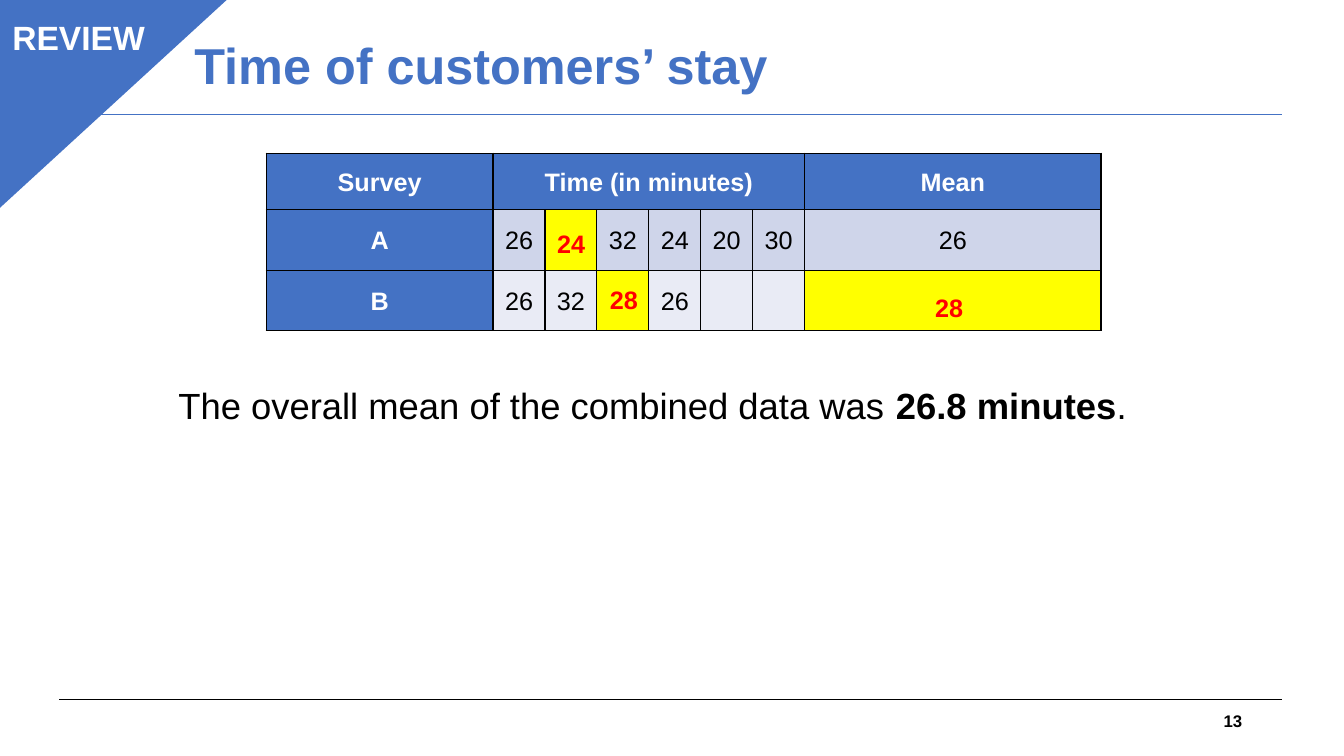
from dataclasses import dataclass

from lxml import etree
from pptx import Presentation
from pptx.dml.color import RGBColor
from pptx.enum.shapes import MSO_CONNECTOR, MSO_SHAPE
from pptx.enum.text import MSO_ANCHOR, PP_ALIGN
from pptx.oxml.ns import qn
from pptx.util import Inches, Pt

LEFT, CENTER, RIGHT = PP_ALIGN.LEFT, PP_ALIGN.CENTER, PP_ALIGN.RIGHT
TOP, MIDDLE = MSO_ANCHOR.TOP, MSO_ANCHOR.MIDDLE
BLUE, BLACK, WHITE, RED, YELLOW = "4472C4", "000000", "FFFFFF", "FF0000", "FFFF00"
BAND_A, BAND_B = "CFD5EA", "E9EBF5"
FONT_NAME = "Arial"
TABLE_SPACING = 1.07


@dataclass(frozen=True)
class Run:
    text: str
    size: float
    color: str = BLACK
    bold: bool = True


@dataclass(frozen=True)
class Label:
    box: tuple[float, float, float, float]
    runs: tuple[Run, ...]
    align: int = LEFT
    anchor: int = TOP
    spacing: float = 1.0


@dataclass(frozen=True)
class Rule:
    top: float
    color: str


@dataclass(frozen=True)
class SurveyRow:
    name: str
    times: tuple[str, ...]
    mean: str
    band: str
    highlighted: tuple[int, ...]


RULES = (Rule(6.94, BLACK), Rule(1.14, BLUE))
RULE_LEFT, RULE_RIGHT = 0.59, 12.72

HEADINGS = {0: "Survey", 1: "Time (in minutes)", 7: "Mean"}
SURVEYS = (
    SurveyRow("A", ("26", "", "32", "24", "20", "30"), "26", BAND_A, (2,)),
    SurveyRow("B", ("26", "32", "", "26", "", ""), "", BAND_B, (3, 7)),
)
TABLE_LEFT, TABLE_TOP = 2.64, 1.52
COLUMN_WIDTHS = (2.25, *[0.515] * 6, 2.94)
ROW_HEIGHTS = (0.56, 0.6, 0.6)


def answer(left: float, top: float, text: str, align: int = CENTER) -> Label:
    """Describe a red answer that lies over a yellow table cell."""
    return Label((left, top, 0.57, 0.4), (Run(text, 18, RED),), align, spacing=TABLE_SPACING)


TITLE = Label((1.83, 0.12, 10, 1.11), (Run("Time of customers’ stay", 36, BLUE),),
              anchor=MIDDLE, spacing=0.9)
PAGE_NUMBER = Label((9.42, 6.95, 3, 0.4), (Run("13", 12),), RIGHT, MIDDLE)
REVIEW = Label((0.01, 0.12, 1.54, 0.5), (Run("REVIEW", 24, WHITE),), CENTER)
CONCLUSION = Label((1.67, 3.75, 10, 0.54), (
    Run("The overall mean of the combined data was ", 26, bold=False),
    Run("26.8 minutes", 26),
    Run(".", 26, bold=False),
))
ANSWERS = (
    answer(5.95, 2.75, "28", LEFT),
    answer(9.13, 2.83, "28"),
    answer(5.38, 2.2, "24"),
)


def rgb(color: str) -> RGBColor:
    return RGBColor.from_string(color)


def set_all(target, values: dict) -> None:
    for name, value in values.items():
        setattr(target, name, value)


def paint(fill, color: str) -> None:
    fill.solid()
    fill.fore_color.rgb = rgb(color)


def write(paragraph, runs: tuple[Run, ...], align: int, spacing: float) -> None:
    set_all(paragraph, {"alignment": align, "line_spacing": spacing})
    for run in runs:
        text_run = paragraph.add_run()
        text_run.text = run.text
        set_all(text_run.font, {"name": FONT_NAME, "size": Pt(run.size), "bold": run.bold})
        text_run.font.color.rgb = rgb(run.color)


def add_label(slide, label: Label) -> None:
    shape = slide.shapes.add_textbox(*map(Inches, label.box))
    set_all(shape.text_frame, {"word_wrap": True, "vertical_anchor": label.anchor})
    write(shape.text_frame.paragraphs[0], label.runs, label.align, label.spacing)


def add_rule(slide, rule: Rule) -> None:
    line = slide.shapes.add_connector(
        MSO_CONNECTOR.STRAIGHT, Inches(RULE_LEFT), Inches(rule.top),
        Inches(RULE_RIGHT), Inches(rule.top))
    line.line.width = Pt(0.75)
    line.line.color.rgb = rgb(rule.color)
    etree.SubElement(line.element.spPr, qn("a:effectLst"))


def add_corner(slide) -> None:
    corner = slide.shapes.add_shape(
        MSO_SHAPE.ISOSCELES_TRIANGLE, *map(Inches, (-0.03, -0.02, 2.29, 2.1)))
    corner.adjustments[0] = 0
    corner.element.spPr.get_or_add_xfrm().set("flipV", "1")
    corner.shadow.inherit = False
    paint(corner.fill, BLUE)
    corner.line.color.rgb = rgb(BLUE)
    corner.line.width = Pt(1)


def add_borders(cell) -> None:
    properties = cell._tc.get_or_add_tcPr()
    for side in ("lnL", "lnR", "lnT", "lnB"):
        border = etree.SubElement(properties, qn(f"a:{side}"), w=str(Pt(1)))
        fill = etree.SubElement(border, qn("a:solidFill"))
        etree.SubElement(fill, qn("a:srgbClr"), val=BLACK)


def format_cell(cell, text: str, fill: str, color: str, margin: float) -> None:
    add_borders(cell)
    paint(cell.fill, fill)
    sides = ("left", "right", "top", "bottom")
    set_all(cell, {f"margin_{side}": Inches(margin) for side in sides})
    cell.vertical_anchor = MIDDLE
    runs = (Run(text, 18, color, color == WHITE),) if text else ()
    write(cell.text_frame.paragraphs[0], runs, CENTER, TABLE_SPACING)


def add_survey_table(slide) -> None:
    table = slide.shapes.add_table(
        len(ROW_HEIGHTS), len(COLUMN_WIDTHS), Inches(TABLE_LEFT), Inches(TABLE_TOP),
        Inches(sum(COLUMN_WIDTHS)), Inches(sum(ROW_HEIGHTS))).table
    set_all(table, {"first_row": False, "horz_banding": False})
    for column, width in zip(table.columns, COLUMN_WIDTHS):
        column.width = Inches(width)
    for row, height in zip(table.rows, ROW_HEIGHTS):
        row.height = Inches(height)

    for column in range(len(COLUMN_WIDTHS)):
        format_cell(table.cell(0, column), HEADINGS.get(column, ""), BLUE, WHITE, 0)
    table.cell(0, 1).merge(table.cell(0, 6))

    for row, survey in enumerate(SURVEYS, start=1):
        format_cell(table.cell(row, 0), survey.name, BLUE, WHITE, 0.01)
        for column, value in enumerate((*survey.times, survey.mean), start=1):
            fill = YELLOW if column in survey.highlighted else survey.band
            format_cell(table.cell(row, column), value, fill, BLACK, 0.01)


def main() -> None:
    presentation = Presentation()
    set_all(presentation, {"slide_width": Inches(13.33), "slide_height": Inches(7.5)})
    slide = presentation.slides.add_slide(presentation.slide_layouts[6])
    for rule in RULES:
        add_rule(slide, rule)
    add_label(slide, TITLE)
    add_label(slide, PAGE_NUMBER)
    add_corner(slide)
    add_label(slide, REVIEW)
    add_survey_table(slide)
    for label in (CONCLUSION, *ANSWERS):
        add_label(slide, label)
    presentation.save("out.pptx")


if __name__ == "__main__":
    main()
